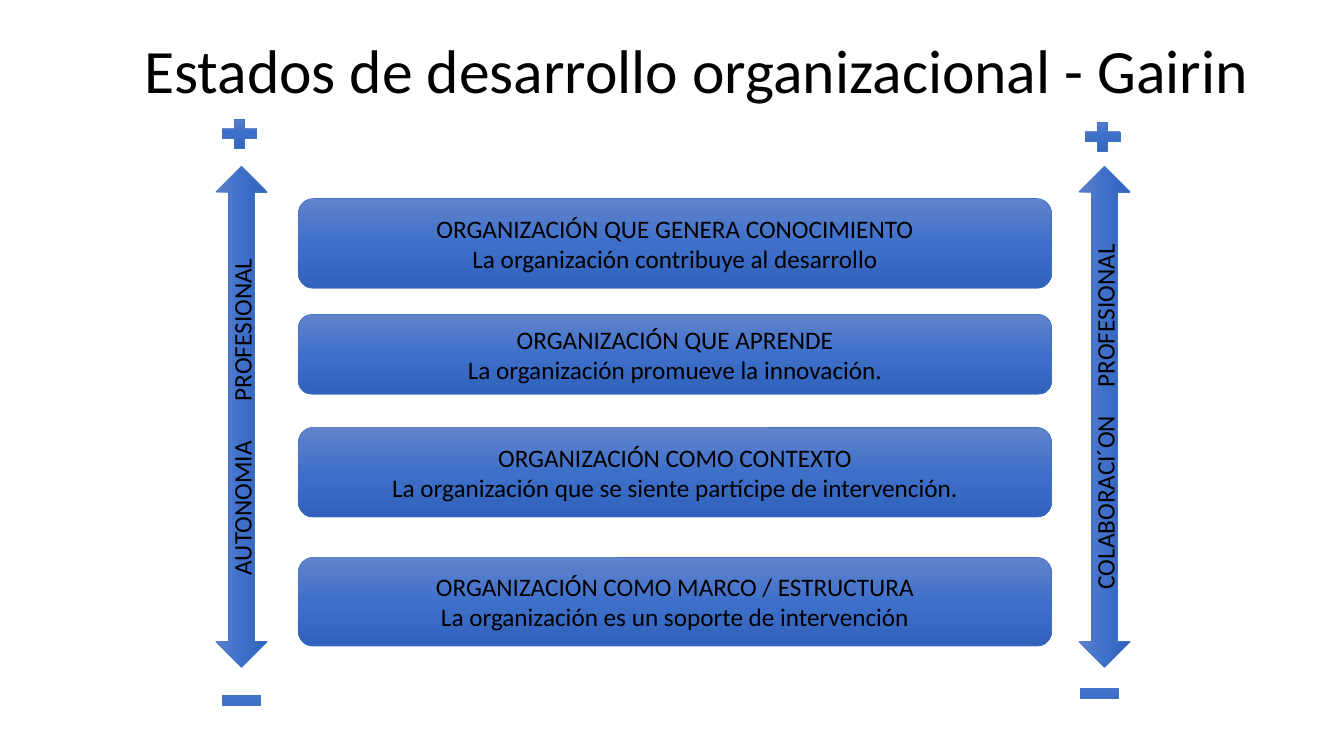
from copy import deepcopy
from pptx import Presentation
from pptx.dml.color import RGBColor
from pptx.enum.shapes import MSO_SHAPE
from pptx.enum.text import MSO_ANCHOR, MSO_AUTO_SIZE, PP_ALIGN
from pptx.oxml.ns import qn
from pptx.util import Inches, Pt

ROUND = MSO_SHAPE.ROUNDED_RECTANGLE
ARROW = MSO_SHAPE.LEFT_RIGHT_ARROW
PLUS, MINUS = MSO_SHAPE.MATH_PLUS, MSO_SHAPE.MATH_MINUS
LEFT, CENTER = PP_ALIGN.LEFT, PP_ALIGN.CENTER
MIDDLE = MSO_ANCHOR.MIDDLE
STOPS = [(0, "6183CB"), (0.5, "3E70CA"), (1, "3062BB")]


def add_block(kind, x, y, w, h):
    """Add a shape with the blue gradient and a thin outline."""
    block = slide.shapes.add_shape(kind, Inches(x), Inches(y), Inches(w), Inches(h))
    block.shadow.inherit = False
    block.line.color.rgb = RGBColor.from_string("4472C4")
    block.line.width = Pt(0.5)
    block.fill.gradient()
    block.fill.gradient_angle = 270
    stops = block.element.spPr.find(".//" + qn("a:gsLst"))
    stops.insert(1, deepcopy(stops[0]))
    for stop, (place, color) in zip(block.fill.gradient_stops, STOPS):
        stop.position = place
        stop.color.rgb = RGBColor.from_string(color)
    block.text_frame.vertical_anchor = MIDDLE
    return block


def add_text(para, text, size, align):
    """Add one black run to a paragraph."""
    para.alignment = align
    run = para.add_run()
    run.text = text
    run.font.name = "Calibri"
    run.font.size = Pt(size)
    run.font.color.rgb = RGBColor.from_string("000000")
    return run


deck = Presentation()
deck.slide_width, deck.slide_height = Inches(13.33), Inches(7.5)
slide = deck.slides.add_slide(deck.slide_layouts[5])

# Title
title = slide.shapes.title
title.left, title.top = Inches(1.33), Inches(0)
title.width, title.height = Inches(11.5), Inches(1.45)
frame = title.text_frame
frame.auto_size = MSO_AUTO_SIZE.NONE
frame.vertical_anchor = MIDDLE
frame.paragraphs[0].line_spacing = 0.9
add_text(frame.paragraphs[0], "Estados de desarrollo organizacional - Gairin", 44, LEFT)

# Stages, from the lowest to the highest
stages = [
    (5.53, 0.88, "ORGANIZACIÓN COMO MARCO / ESTRUCTURA",
     "La organización es un soporte de intervención"),
    (4.24, 0.89, "ORGANIZACIÓN COMO CONTEXTO",
     "La organización que se siente partícipe de intervención."),
    (3.12, 0.79, "ORGANIZACIÓN QUE APRENDE",
     "La organización promueve la innovación."),
    (1.97, 0.89, "ORGANIZACIÓN QUE GENERA CONOCIMIENTO",
     "La organización contribuye al desarrollo"),
]
for y, h, name, detail in stages:
    frame = add_block(ROUND, 2.96, y, 7.47, h).text_frame
    add_text(frame.paragraphs[0], name, 18, CENTER)
    add_text(frame.add_paragraph(), detail, 18, CENTER)

# Upright arrows, the two words set apart by a widened space
axes = [(-0.09, "AUTONOMIA", 2440), (8.47, "COLABORACI´ON", 1630)]
for x, word, gap in axes:
    arrow = add_block(ARROW, x, 3.88, 4.97, 0.51)
    arrow.rotation = 270
    para = arrow.text_frame.paragraphs[0]
    add_text(para, word, 18, CENTER)
    space = add_text(para, " ", 18, CENTER)
    space.font._element.set("spc", str(gap))
    add_text(para, "PROFESIONAL", 18, CENTER)

# Signs at the ends of the arrows
signs = [(MINUS, 2.14, 6.75, 0.51, 0.4), (MINUS, 10.65, 6.68, 0.51, 0.4),
         (PLUS, 10.7, 1.16, 0.47, 0.39), (PLUS, 2.14, 1.13, 0.47, 0.39)]
for sign in signs:
    add_block(*sign)

deck.save("out.pptx")
